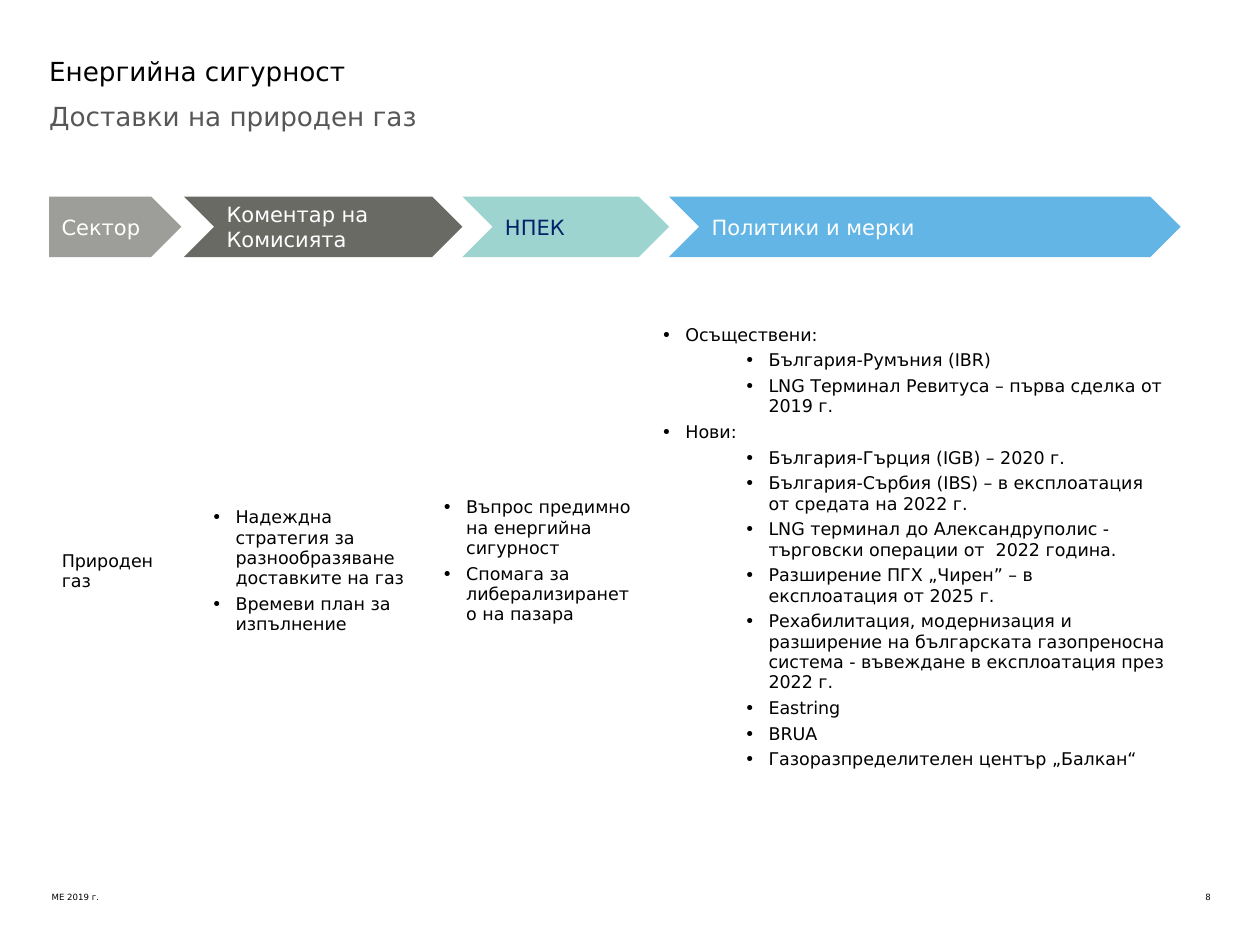
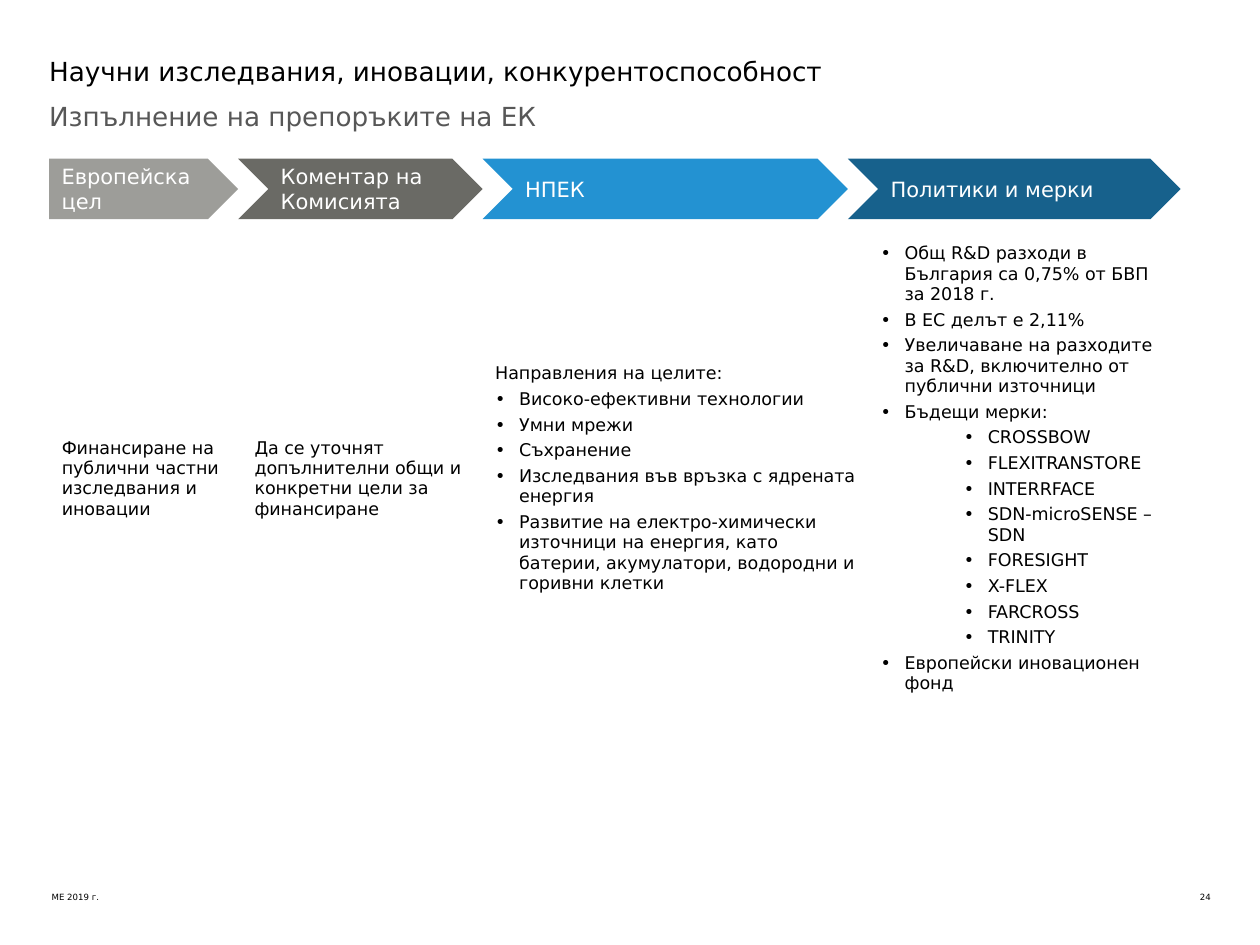
"""Builds two slides on energy policy: arrow headings above a one-row table."""
from dataclasses import dataclass

from lxml.etree import SubElement
from pptx import Presentation
from pptx.dml.color import RGBColor
from pptx.enum.shapes import MSO_SHAPE as Shape
from pptx.enum.text import MSO_ANCHOR as Anchor, MSO_AUTO_SIZE as AutoSize, PP_ALIGN as Align
from pptx.oxml.ns import qn
from pptx.util import Inches, Pt


@dataclass(frozen=True)
class Theme:
    """Colours, type sizes and lengths shared by the slides."""
    font: str = "DejaVu Sans"
    black: str = "000000"
    white: str = "FFFFFF"
    navy: str = "012169"
    grey: str = "575757"
    light_stone: str = "9D9D99"
    dark_stone: str = "6A6A65"
    mint: str = "9DD4CF"
    sky: str = "62B5E5"
    blue: str = "2392D2"
    deep_blue: str = "17618C"
    heading: float = 15
    band: float = 12
    body: float = 10
    footer: float = 4.9
    left: float = 0.39
    full_width: float = 9.23
    band_height: float = 0.48
    inset: float = 0.1
    hanging: float = 0.19
    indents: tuple = (0, 0.19, 0.85)


THEME = Theme()
FOOTER = "МЕ 2019 г."
PLAIN, BULLET, SUB = range(3)

PAGES = [
    {
        "number": "8",
        "title": "Енергийна сигурност",
        "subtitle": "Доставки на природен газ",
        "band_top": 1.56,
        "first_gap": 0.02,
        "bands": [
            ("Сектор", 1.05, THEME.light_stone, THEME.white),
            ("Коментар на Комисията", 2.21, THEME.dark_stone, THEME.white),
            ("НПЕК", 1.64, THEME.mint, THEME.navy),
            ("Политики и мерки", 4.06, THEME.sky, THEME.white),
        ],
        "table_top": 2.27,
        "table_height": 4.53,
        "bottom_margins": (0.1, 0.1, 0.26, 0.48),
        "columns": [
            (1.19, [(PLAIN, "Природен газ")]),
            (1.83, [
                (BULLET, "Надеждна стратегия за разнообразяване доставките на газ"),
                (BULLET, "Времеви план за изпълнение"),
            ]),
            (1.74, [
                (BULLET, "Въпрос предимно на енергийна сигурност"),
                (BULLET, "Спомага за либерализирането на пазара"),
            ]),
            (4.21, [
                (BULLET, "Осъществени:"),
                (SUB, "България-Румъния (IBR)"),
                (SUB, "LNG Терминал Ревитуса – първа сделка от 2019 г."),
                (BULLET, "Нови:"),
                (SUB, "България-Гърция (IGB) – 2020 г."),
                (SUB, "България-Сърбия (IBS) – в експлоатация от средата на 2022 г."),
                (SUB, "LNG терминал до Александруполис - търговски операции от  2022 година."),
                (SUB, "Разширение ПГХ „Чирен” – в експлоатация от 2025 г."),
                (SUB, "Рехабилитация, модернизация и разширение на българската "
                      "газопреносна система - въвеждане в експлоатация през 2022 г."),
                (SUB, "Eastring"),
                (SUB, "BRUA"),
                (SUB, "Газоразпределителен център „Балкан“"),
            ]),
        ],
    },
    {
        "number": "24",
        "title": "Научни изследвания, иновации, конкурентоспособност",
        "subtitle": "Изпълнение на препоръките на ЕК",
        "band_top": 1.26,
        "first_gap": 0,
        "bands": [
            ("Европейска цел", 1.5, THEME.light_stone, THEME.white),
            ("Коментар на Комисията", 1.94, THEME.dark_stone, THEME.white),
            ("НПЕК", 2.9, THEME.blue, THEME.white),
            ("Политики и мерки", 2.64, THEME.deep_blue, THEME.white),
        ],
        "table_top": 1.83,
        "table_height": 3.94,
        "bottom_margins": (0.1, 0.1, 0.1, 0.26),
        "columns": [
            (1.53, [(PLAIN, "Финансиране на публични частни изследвания и иновации")]),
            (1.91, [(PLAIN, "Да се уточнят допълнителни общи и конкретни цели за финансиране")]),
            (3.06, [
                (PLAIN, "Направления на целите:"),
                (BULLET, "Високо-ефективни технологии"),
                (BULLET, "Умни мрежи"),
                (BULLET, "Съхранение"),
                (BULLET, "Изследвания във връзка с ядрената енергия"),
                (BULLET, "Развитие на електро-химически източници на енергия, като "
                         "батерии, акумулатори, водородни и горивни клетки"),
            ]),
            (2.49, [
                (BULLET, "Общ R&D разходи в България са 0,75% от БВП за 2018 г."),
                (BULLET, "В ЕС делът е 2,11%"),
                (BULLET, "Увеличаване на разходите за R&D, включително от публични източници"),
                (BULLET, "Бъдещи мерки:"),
                (SUB, "CROSSBOW"),
                (SUB, "FLEXITRANSTORE"),
                (SUB, "INTERRFACE"),
                (SUB, "SDN-microSENSE – SDN"),
                (SUB, "FORESIGHT"),
                (SUB, "X-FLEX"),
                (SUB, "FARCROSS"),
                (SUB, "TRINITY"),
                (BULLET, "Европейски иновационен фонд"),
            ]),
        ],
    },
]


def add_span(para, text, size, colour):
    """Add one formatted run to a paragraph."""
    span = para.add_run()
    span.text = text
    span.font.name = THEME.font
    span.font.size = Pt(size)
    span.font.color.rgb = RGBColor.from_string(colour)


def set_margins(holder, inset):
    """Give a text frame or a cell the same margin on every side."""
    holder.margin_left = holder.margin_right = Inches(inset)
    holder.margin_top = holder.margin_bottom = Inches(inset)


def write_line(box, text, size, colour, align=Align.LEFT, anchor=Anchor.TOP, inset=0):
    """Write a single paragraph into a shape."""
    frame = box.text_frame
    frame.word_wrap = True
    frame.auto_size = AutoSize.NONE
    frame.vertical_anchor = anchor
    set_margins(frame, inset)
    para = frame.paragraphs[0]
    para.alignment = align
    add_span(para, text, size, colour)


def add_label(page, area, text, size, colour, align=Align.LEFT):
    """Add a text box without margins."""
    box = page.shapes.add_textbox(*map(Inches, area))
    write_line(box, text, size, colour, align)


def add_headings(page, content):
    """Fill the title and add the subtitle, footer and page number."""
    title = page.shapes.title
    title.left, title.top = Inches(THEME.left), Inches(0.44)
    title.width, title.height = Inches(THEME.full_width), Inches(0.37)
    write_line(title, content["title"], THEME.heading, THEME.black)
    add_label(page, (THEME.left, 0.8, THEME.full_width, 0.83),
              content["subtitle"], THEME.heading, THEME.grey)
    add_label(page, (0.41, 7.08, 4.39, 0.22), FOOTER, THEME.footer, THEME.black)
    add_label(page, (9.36, 7.08, 0.25, 0.08), content["number"],
              THEME.footer, THEME.black, Align.RIGHT)


def add_bands(page, content):
    """Lay the arrow headings side by side, the first one flat on the left."""
    left = THEME.left
    for index, (label, width, fill, ink) in enumerate(content["bands"]):
        kind = Shape.CHEVRON if index else Shape.PENTAGON
        area = (left, content["band_top"], width, THEME.band_height)
        band = page.shapes.add_shape(kind, *map(Inches, area))
        band.shadow.inherit = False
        band.fill.solid()
        band.fill.fore_color.rgb = RGBColor.from_string(fill)
        band.line.fill.background()
        write_line(band, label, THEME.band, ink, anchor=Anchor.MIDDLE, inset=THEME.inset)
        left += width + (0 if index else content["first_gap"])


def set_bullet(para, level):
    """Give a paragraph a hanging bullet at its level."""
    para.level = level - 1
    properties = para._p.get_or_add_pPr()
    properties.set("marL", str(Inches(THEME.indents[level])))
    properties.set("indent", str(-Inches(THEME.hanging)))
    SubElement(properties, qn("a:buFont")).set("typeface", THEME.font)
    SubElement(properties, qn("a:buChar")).set("char", "•")


def fill_cell(cell, items, bottom_margin):
    """Write plain and bulleted paragraphs into a cell."""
    cell.fill.background()
    cell.vertical_anchor = Anchor.MIDDLE
    set_margins(cell, THEME.inset)
    cell.margin_bottom = Inches(bottom_margin)
    frame = cell.text_frame
    for index, (level, text) in enumerate(items):
        para = frame.add_paragraph() if index else frame.paragraphs[0]
        if level != PLAIN:
            set_bullet(para, level)
        if index:
            para.space_before = Pt(3)
        add_span(para, text, THEME.body, THEME.black)


def add_columns(page, content):
    """Add the one-row table under the arrow headings."""
    columns = content["columns"]
    area = (THEME.left, content["table_top"],
            sum(width for width, _ in columns), content["table_height"])
    table = page.shapes.add_table(1, len(columns), *map(Inches, area)).table
    table.first_row = table.horz_banding = False
    for index, (width, items) in enumerate(columns):
        table.columns[index].width = Inches(width)
        fill_cell(table.cell(0, index), items, content["bottom_margins"][index])


def main():
    """Build and save the deck."""
    deck = Presentation()
    deck.slide_width, deck.slide_height = Inches(10), Inches(7.5)
    for content in PAGES:
        page = deck.slides.add_slide(deck.slide_layouts[5])
        add_headings(page, content)
        add_bands(page, content)
        add_columns(page, content)
    deck.save("out.pptx")


if __name__ == "__main__":
    main()
